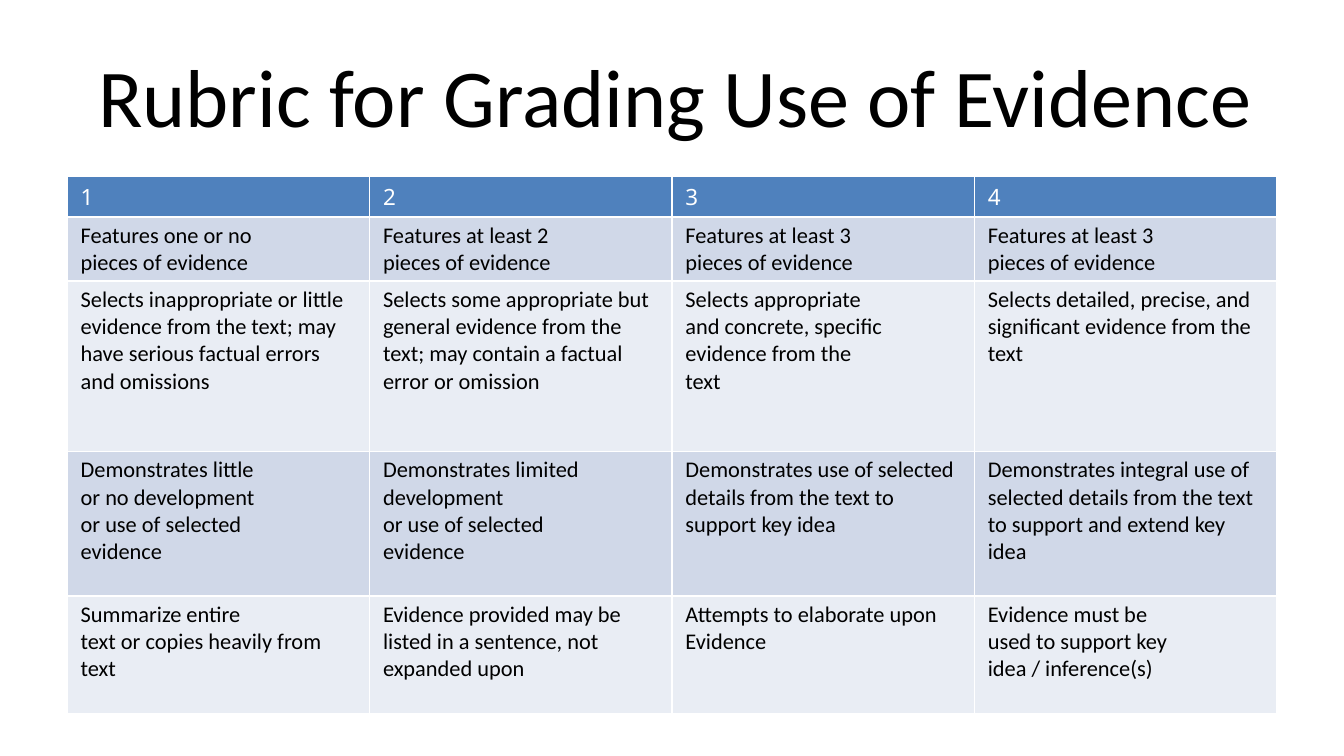
import pptx
import pptx.dml.color
import pptx.enum.text
import pptx.util
from dataclasses import dataclass

Pt = pptx.util.Pt
RGB = pptx.dml.color.RGBColor.from_string


@dataclass(frozen=True)
class Theme:
    ink: str = "000000"
    header_ink: str = "FFFFFF"
    header_fill: str = "4F81BD"
    bands: tuple = ("D0D8E8", "E9EDF4")
    body_font: str = "Calibri"
    header_font: str = "Noto Sans"
    title_size: int = 44
    table_size: int = 12


theme = Theme()


def style(paragraph, font, size, color):
    paragraph.font.name = font
    paragraph.font.size = Pt(size)
    paragraph.font.bold = False
    paragraph.font.color.rgb = RGB(color)


scores = ["1", "2", "3", "4"]
criteria = [
    [
        "Features one or no\npieces of evidence",
        "Features at least 2\npieces of evidence",
        "Features at least 3\npieces of evidence",
        "Features at least 3\npieces of evidence",
    ],
    [
        "Selects inappropriate or little evidence from the text; may have serious factual errors and omissions",
        "Selects some appropriate but general evidence from the text; may contain a factual\nerror or omission",
        "Selects appropriate\nand concrete, specific evidence from the\ntext",
        "Selects detailed, precise, and significant evidence from the text",
    ],
    [
        "Demonstrates little\nor no development\nor use of selected\nevidence",
        "Demonstrates limited development\nor use of selected\nevidence",
        "Demonstrates use of selected details from the text to support key idea",
        "Demonstrates integral use of selected details from the text to support and extend key idea",
    ],
    [
        "Summarize entire\ntext or copies heavily from text",
        "Evidence provided may be listed in a sentence, not expanded upon",
        "Attempts to elaborate upon Evidence",
        "Evidence must be\nused to support key\nidea / inference(s)",
    ],
]
row_heights = [21.6, 34.4, 91.4, 77.4, 63.2]

deck = pptx.Presentation()
deck.slide_width = Pt(720)
deck.slide_height = Pt(405)
slide = deck.slides.add_slide(deck.slide_layouts[6])

title = slide.shapes.add_textbox(Pt(10), Pt(16.5), Pt(704), Pt(68)).text_frame
title.word_wrap = True
title.vertical_anchor = pptx.enum.text.MSO_ANCHOR.MIDDLE
title.text = "Rubric for Grading Use of Evidence"
title.paragraphs[0].alignment = pptx.enum.text.PP_ALIGN.CENTER
style(title.paragraphs[0], theme.body_font, theme.title_size, theme.ink)

rubric = slide.shapes.add_table(
    len(row_heights), len(scores), Pt(36), Pt(94.5), Pt(648), Pt(sum(row_heights))
).table

for row, (height, texts) in enumerate(zip(row_heights, [scores] + criteria)):
    rubric.rows[row].height = Pt(height)
    if row == 0:
        fill, font, ink = theme.header_fill, theme.header_font, theme.header_ink
    else:
        fill, font, ink = theme.bands[(row - 1) % 2], theme.body_font, theme.ink
    for column, text in enumerate(texts):
        cell = rubric.cell(row, column)
        cell.margin_top = cell.margin_bottom = Pt(2.7)
        cell.fill.solid()
        cell.fill.fore_color.rgb = RGB(fill)
        cell.text = text
        for paragraph in cell.text_frame.paragraphs:
            style(paragraph, font, theme.table_size, ink)

deck.save("out.pptx")
